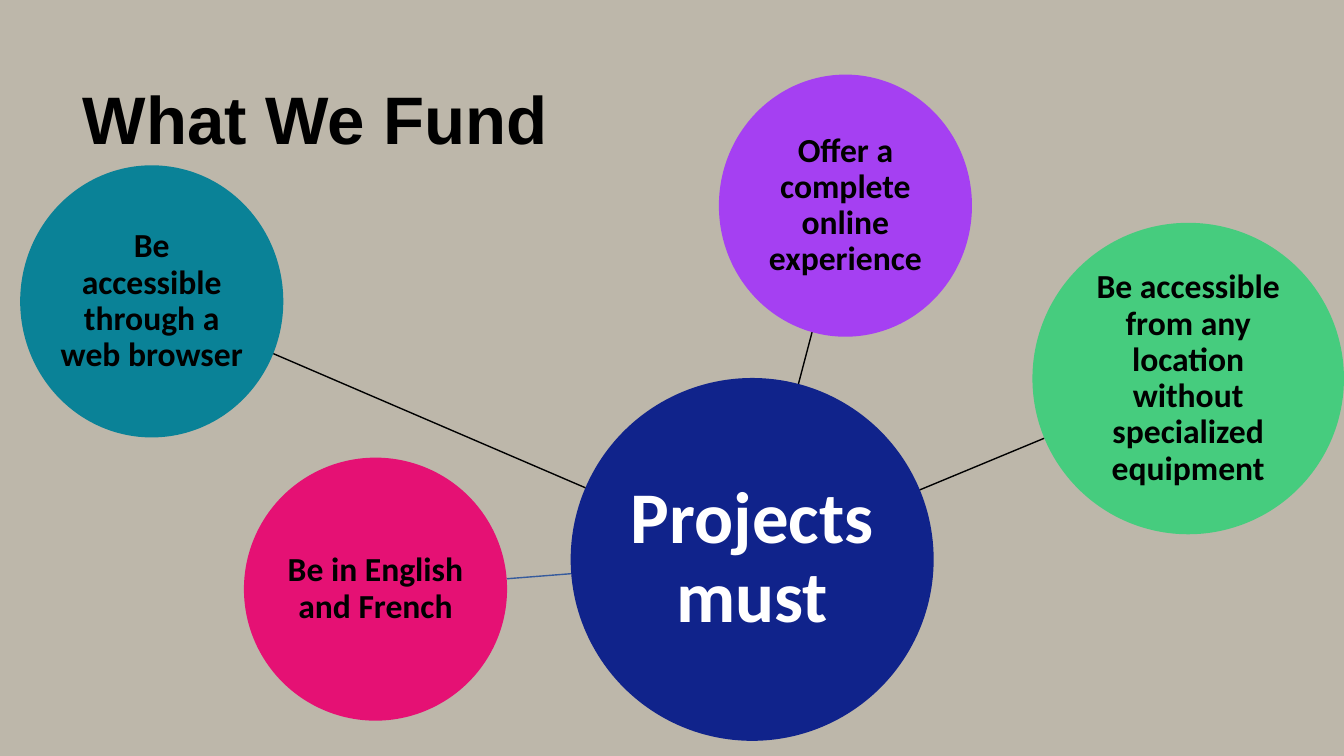
from dataclasses import dataclass
from math import hypot

from lxml import etree
from pptx import Presentation
from pptx.dml.color import RGBColor
from pptx.enum.shapes import MSO_CONNECTOR, MSO_SHAPE
from pptx.enum.text import MSO_ANCHOR, PP_ALIGN
from pptx.oxml.ns import qn
from pptx.util import Inches, Length, Pt

OVAL = MSO_SHAPE.OVAL
STRAIGHT = MSO_CONNECTOR.STRAIGHT
MIDDLE = MSO_ANCHOR.MIDDLE
LEFT, CENTER = PP_ALIGN.LEFT, PP_ALIGN.CENTER

SAND = RGBColor(0xBD, 0xB7, 0xAA)
NAVY = RGBColor(0x10, 0x23, 0x8B)
TEAL = RGBColor(0x0A, 0x82, 0x97)
PURPLE = RGBColor(0xA5, 0x40, 0xF2)
GREEN = RGBColor(0x46, 0xCC, 0x7E)
PINK = RGBColor(0xE5, 0x11, 0x74)
BLUE = RGBColor(0x36, 0x5B, 0x9D)
BLACK = RGBColor(0, 0, 0)
WHITE = RGBColor(0xFF, 0xFF, 0xFF)

WIDTH, HEIGHT = Inches(13.33), Inches(7.5)
TITLE_BOX = (6.15, 9.6, 79.37, 15.2)


@dataclass(frozen=True)
class Bubble:
    text: str
    left: float
    top: float
    width: float
    height: float
    fill: RGBColor
    color: RGBColor = BLACK
    size: int = 24
    inset: float = 0.02
    spoke: RGBColor = BLACK

    def center(self) -> tuple[float, float]:
        return self.left + self.width / 2, self.top + self.height / 2

    def edge_toward(self, other: "Bubble") -> tuple[float, float]:
        (cx, cy), (ox, oy) = self.center(), other.center()
        dx, dy = ox - cx, oy - cy
        reach = 1 / hypot(2 * dx / self.width, 2 * dy / self.height)
        return cx + dx * reach, cy + dy * reach


HUB = Bubble("Projects must", 42.46, 50, 27.01, 48, NAVY, WHITE, 52, 0.04)
REQUIREMENTS = [
    Bubble("Be accessible through a web browser", 1.5, 21.87, 19.58, 36, TEAL),
    Bubble("Offer a complete online experience", 53.49, 9.87, 18.83, 34.67, PURPLE),
    Bubble("Be accessible from any location without specialized equipment",
           76.82, 29.47, 23.18, 41.2, GREEN),
    Bubble("Be in English and French", 18.15, 60.53, 19.58, 34.8, PINK, spoke=BLUE),
]


def across(percent: float) -> Length:
    return Length(round(WIDTH * percent / 100))


def down(percent: float) -> Length:
    return Length(round(HEIGHT * percent / 100))


def box(left: float, top: float, width: float, height: float) -> tuple[Length, ...]:
    return across(left), down(top), across(width), down(height)


def write(sp, text: str, *, size: int, font: str, color: RGBColor, align: PP_ALIGN,
          spacing: float | Length, insets: tuple[float, float, float, float]) -> None:
    tf = sp.text_frame
    tf.word_wrap = True
    tf.vertical_anchor = MIDDLE
    tf.margin_left, tf.margin_top, tf.margin_right, tf.margin_bottom = map(Inches, insets)
    p = tf.paragraphs[0]
    p.alignment = align
    p.line_spacing = spacing
    p.space_before = Pt(0)
    r = p.add_run()
    r.text = text
    r.font.size, r.font.name, r.font.bold = Pt(size), font, True
    r.font.color.rgb = color


def draw_spoke(s, hub: Bubble, bubble: Bubble) -> None:
    x1, y1 = hub.edge_toward(bubble)
    x2, y2 = bubble.edge_toward(hub)
    line = s.shapes.add_connector(STRAIGHT, across(x1), down(y1), across(x2), down(y2))
    line.line.color.rgb = bubble.spoke
    line.line.width = Pt(1)
    etree.SubElement(line._element.spPr, qn("a:effectLst"))


def draw_bubble(s, bubble: Bubble) -> None:
    sp = s.shapes.add_shape(OVAL, *box(bubble.left, bubble.top, bubble.width, bubble.height))
    sp.shadow.inherit = False
    sp.fill.solid()
    sp.fill.fore_color.rgb = bubble.fill
    sp.line.fill.background()
    write(sp, bubble.text, size=bubble.size, font="Calibri", color=bubble.color,
          align=CENTER, spacing=0.9, insets=(bubble.inset,) * 4)


def main() -> None:
    prs = Presentation()
    prs.slide_width, prs.slide_height = WIDTH, HEIGHT
    s = prs.slides.add_slide(prs.slide_layouts[5])
    s.background.fill.solid()
    s.background.fill.fore_color.rgb = SAND

    title = s.shapes.title
    title.left, title.top, title.width, title.height = box(*TITLE_BOX)
    write(title, "What We Fund", size=48, font="Arial", color=BLACK,
          align=LEFT, spacing=Pt(60), insets=(0, 0, 0, 0.28))

    draw_bubble(s, HUB)
    for bubble in REQUIREMENTS:
        draw_spoke(s, HUB, bubble)
        draw_bubble(s, bubble)
    prs.save("out.pptx")


if __name__ == "__main__":
    main()
